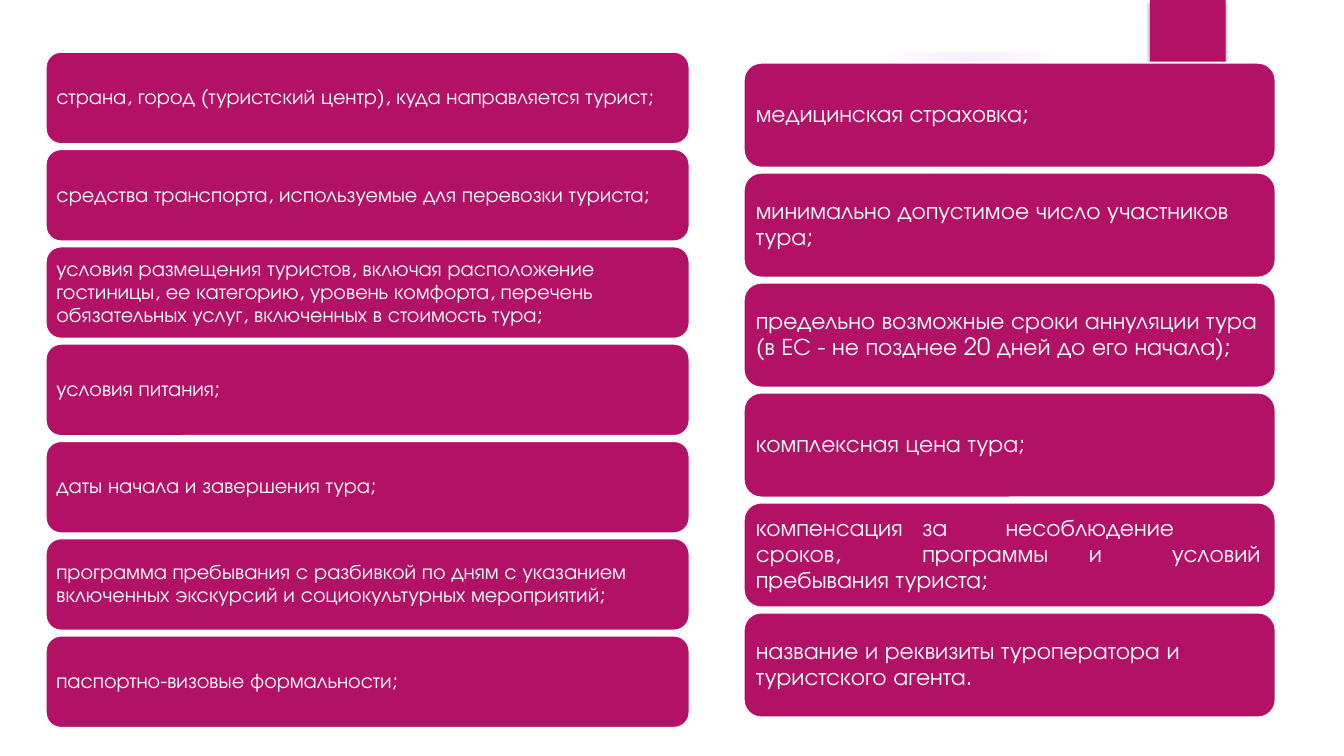
from dataclasses import dataclass

from lxml import etree
from pptx import Presentation
from pptx.dml.color import RGBColor
from pptx.enum.shapes import MSO_SHAPE as SHP
from pptx.enum.text import MSO_ANCHOR as ANCHOR, PP_ALIGN as ALIGN
from pptx.oxml import parse_xml
from pptx.oxml.ns import nsdecls, qn
from pptx.util import Pt


@dataclass(frozen=True)
class Theme:
    accent: str = "B31166"
    paper: str = "FFFFFF"
    glow: str = "9B6BF2"
    shadow: str = "000000"
    font: str = "TeX Gyre Adventor"
    small: float = 15
    large: float = 17
    outline: float = 1.5


THEME = Theme()
SLIDE_W, SLIDE_H = 960, 540

LEFT_ITEMS = [
    "страна, город (туристский центр), куда направляется турист;",
    "средства транспорта, используемые для перевозки туриста;",
    "условия размещения туристов, включая расположение гостиницы, ее категорию, "
    "уровень комфорта, перечень обязательных услуг, включенных в стоимость тура;",
    "условия питания;",
    "даты начала и завершения тура;",
    "программа пребывания с разбивкой по дням с указанием включенных экскурсий "
    "и социокультурных мероприятий;",
    "паспортно-визовые формальности;",
]
RIGHT_ITEMS = [
    "медицинская страховка;",
    "минимально допустимое число участников тура;",
    "предельно возможные сроки аннуляции тура (в ЕС - не позднее 20 дней "
    "до его начала);",
    "комплексная цена тура;",
    "компенсация\tза\tнесоблюдение\tсроков,\tпрограммы\tи\tусловий "
    "пребывания туриста;",
    "название и реквизиты туроператора и туристского агента.",
]


def add_box(s, kind, box, color):
    sp = s.shapes.add_shape(kind, *(Pt(v) for v in box))
    sp.shadow.inherit = False
    sp.fill.solid()
    sp.fill.fore_color.rgb = RGBColor.from_string(color)
    sp.line.fill.background()
    return sp


def add_glow(s, box):
    """Circle that fades from its centre to nothing."""
    sp = add_box(s, SHP.OVAL, box, THEME.glow)
    stops = "".join(
        f'<a:gs pos="{pos * 1000}"><a:srgbClr val="{THEME.glow}">'
        f'<a:alpha val="{alpha * 1000}"/></a:srgbClr></a:gs>'
        for pos, alpha in ((0, 14), (36, 7), (73, 0), (100, 0)))
    grad = parse_xml(
        f'<a:gradFill {nsdecls("a")}><a:gsLst>{stops}</a:gsLst>'
        '<a:path path="circle"><a:fillToRect l="50000" t="50000" '
        'r="50000" b="50000"/></a:path></a:gradFill>')
    sppr = sp.element.spPr
    sppr.replace(sppr.find(qn("a:solidFill")), grad)


def add_tab(s, box):
    """Accent tab with a soft shadow below it."""
    sp = add_box(s, SHP.RECTANGLE, box, THEME.accent)
    effects = sp.element.spPr.find(qn("a:effectLst"))
    shadow = etree.SubElement(effects, qn("a:outerShdw"), blurRad=str(Pt(3)),
                              dist=str(Pt(2)), dir="5400000", rotWithShape="0")
    clr = etree.SubElement(shadow, qn("a:srgbClr"), val=THEME.shadow)
    etree.SubElement(clr, qn("a:alpha"), val="45000")


def add_item(s, box, text, size, inset, tab_step):
    sp = add_box(s, SHP.ROUNDED_RECTANGLE, box, THEME.accent)
    sp.line.color.rgb = RGBColor.from_string(THEME.paper)
    sp.line.width = Pt(THEME.outline)
    tf = sp.text_frame
    frame_format = {"word_wrap": True, "vertical_anchor": ANCHOR.MIDDLE}
    for side in ("left", "top", "right", "bottom"):
        frame_format[f"margin_{side}"] = Pt(inset)
    for name, value in frame_format.items():
        setattr(tf, name, value)
    p = tf.paragraphs[0]
    p.alignment = ALIGN.LEFT
    p.line_spacing = 0.9
    p._p.get_or_add_pPr().set("defTabSz", str(Pt(tab_step)))
    r = p.add_run()
    r.text = text
    for name, value in {"name": THEME.font, "size": Pt(size)}.items():
        setattr(r.font, name, value)
    r.font.color.rgb = RGBColor.from_string(THEME.paper)


def add_column(s, box, items, item_h, size, inset):
    """Stack the items evenly from the top to the bottom of the box."""
    x, y, w, h = box
    pitch = (h - item_h) / (len(items) - 1)
    for i, text in enumerate(items):
        add_item(s, (x, y + i * pitch, w, item_h), text, size, inset,
                 tab_step=3.5 * size)


def add_decor(s, box):
    x, y, w, h = box
    add_glow(s, (x + 630, y + 0.7, 126, 126))
    add_box(s, SHP.RECTANGLE, (x, y, w, 37.5), THEME.paper)
    add_tab(s, (x + 821.5, y, 54, 90))


def main():
    prs = Presentation()
    prs.slide_width, prs.slide_height = Pt(SLIDE_W), Pt(SLIDE_H)
    s = prs.slides.add_slide(prs.slide_layouts[6])
    add_decor(s, (0, 0, SLIDE_W, SLIDE_H))
    add_column(s, (32.6, 37, 460, 483), LEFT_ITEMS, 66, THEME.small, 4.5)
    add_column(s, (531.2, 44.8, 380, 467.7), RIGHT_ITEMS, 75, THEME.large, 5)
    prs.save("out.pptx")


if __name__ == "__main__":
    main()
